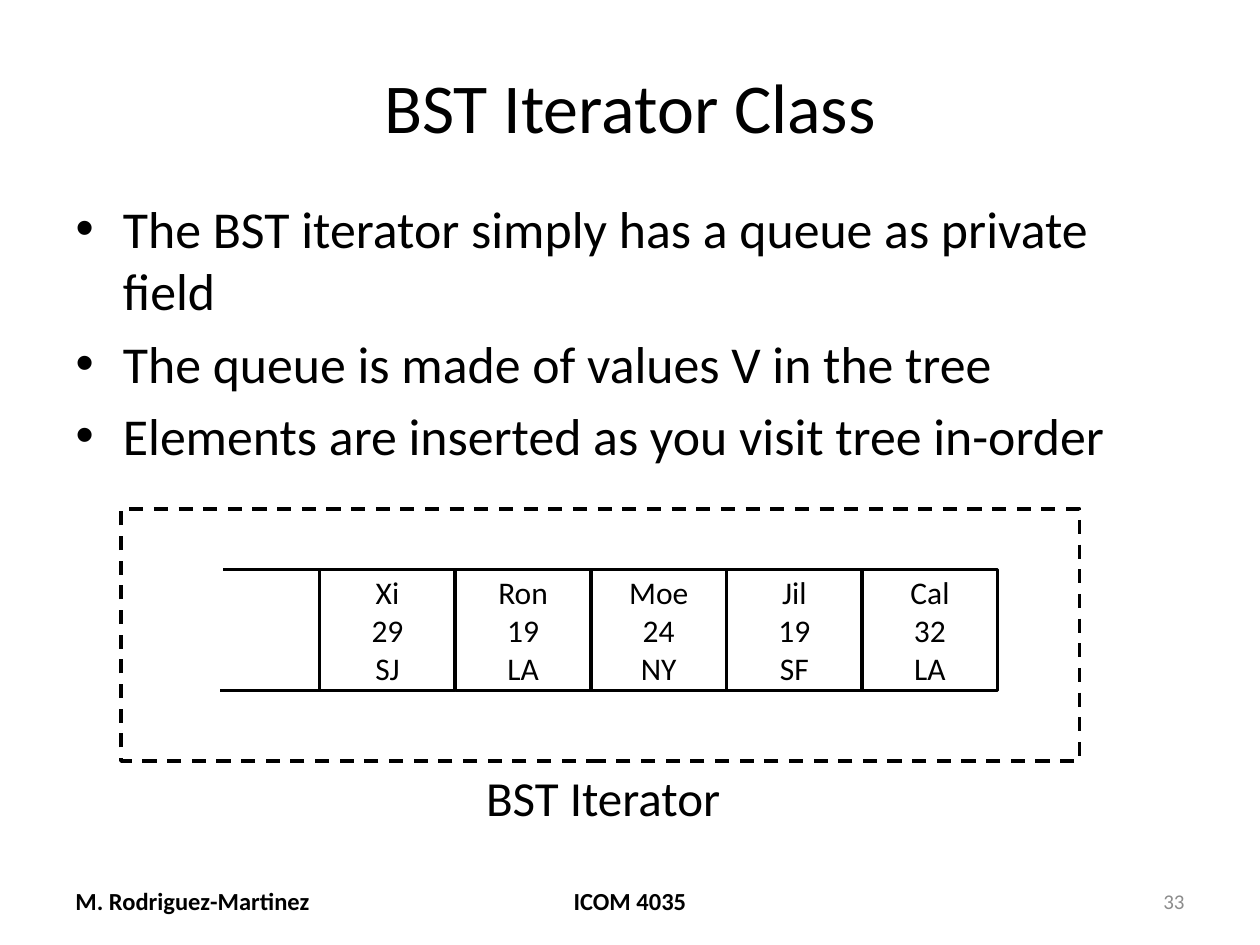
from dataclasses import dataclass

from pptx import Presentation
from pptx.dml.color import RGBColor
from pptx.enum.dml import MSO_LINE_DASH_STYLE as Dash
from pptx.enum.shapes import MSO_CONNECTOR as Connector, MSO_SHAPE as Shape
from pptx.enum.text import MSO_ANCHOR as Anchor, MSO_AUTO_SIZE as AutoSize, PP_ALIGN as Align
from pptx.oxml.xmlchemy import OxmlElement
from pptx.util import Pt

BLACK = RGBColor(0x00, 0x00, 0x00)
WHITE = RGBColor(0xFF, 0xFF, 0xFF)
GRAY = RGBColor(0x8C, 0x8C, 0x8C)
FONT = "Calibri"
LINE_WIDTH = 2
CELL_LEFT, CELL_TOP = 182.7, 325.4
CELL_WIDTH, CELL_HEIGHT = 77.5, 69.1
OPEN_END = 56.9


@dataclass(frozen=True)
class Area:
    left: float
    top: float
    width: float
    height: float

    def lengths(self) -> tuple:
        return Pt(self.left), Pt(self.top), Pt(self.width), Pt(self.height)


@dataclass(frozen=True)
class Style:
    size: float
    align: Align = Align.LEFT
    color: RGBColor = BLACK
    bold: bool = False


@dataclass(frozen=True)
class Label:
    text: str
    area: Area
    style: Style
    wrap: bool = True
    anchor: Anchor = Anchor.MIDDLE


@dataclass(frozen=True)
class Person:
    name: str
    age: str
    city: str


BULLETS = (
    "The BST iterator simply has a queue as private field",
    "The queue is made of values V in the tree",
    "Elements are inserted as you visit tree in-order",
)
QUEUE = (
    Person("Xi", "29", "SJ"),
    Person("Ron", "19", "LA"),
    Person("Moe", "24", "NY"),
    Person("Jil", "19", "SF"),
    Person("Cal", "32", "LA"),
)
LABELS = (
    Label("M. Rodriguez-Martinez", Area(36, 500.5, 168, 28.75), Style(14, bold=True)),
    Label("ICOM 4035", Area(246, 500.5, 228, 28.75), Style(14, Align.CENTER, bold=True)),
    Label("33", Area(516, 500.5, 168, 28.75), Style(12, Align.RIGHT, GRAY)),
    Label("BST Iterator", Area(270.7, 434.9, 151.2, 41), Style(28), False, Anchor.TOP),
)


def write(frame, lines: tuple, style: Style) -> None:
    for index, line in enumerate(lines):
        para = frame.add_paragraph() if index else frame.paragraphs[0]
        para.alignment = style.align
        span = para.add_run()
        span.text = line
        span.font.name = FONT
        span.font.size = Pt(style.size)
        span.font.bold = style.bold
        span.font.color.rgb = style.color


def fill_placeholder(box, area: Area, lines: tuple, style: Style) -> None:
    box.left, box.top, box.width, box.height = area.lengths()
    box.text_frame.auto_size = AutoSize.NONE
    write(box.text_frame, lines, style)


def add_label(page, label: Label) -> None:
    frame = page.shapes.add_textbox(*label.area.lengths()).text_frame
    frame.word_wrap = label.wrap
    frame.vertical_anchor = label.anchor
    write(frame, (label.text,), label.style)


def add_box(page, area: Area):
    box = page.shapes.add_shape(Shape.RECTANGLE, *area.lengths())
    box.shadow.inherit = False
    box.line.color.rgb = BLACK
    box.line.width = Pt(LINE_WIDTH)
    return box


def add_cell(page, index: int, person: Person) -> None:
    left = CELL_LEFT + index * CELL_WIDTH
    box = add_box(page, Area(left, CELL_TOP, CELL_WIDTH, CELL_HEIGHT))
    box.fill.solid()
    box.fill.fore_color.rgb = WHITE
    box.text_frame.vertical_anchor = Anchor.MIDDLE
    write(box.text_frame, (person.name, person.age, person.city), Style(18, Align.CENTER))


def add_open_edge(page, right: float, top: float) -> None:
    edge = page.shapes.add_connector(
        Connector.STRAIGHT, Pt(right), Pt(top), Pt(right - OPEN_END), Pt(top)
    )
    edge.line.color.rgb = BLACK
    edge.line.width = Pt(LINE_WIDTH)
    edge._element.spPr.append(OxmlElement("a:effectLst"))


def main() -> None:
    deck = Presentation()
    deck.slide_width, deck.slide_height = Pt(720), Pt(540)
    page = deck.slides.add_slide(deck.slide_layouts[1])

    title, body = page.placeholders
    fill_placeholder(
        title, Area(36, 21.6, 648, 77), ("BST Iterator Class",), Style(40, Align.CENTER)
    )
    fill_placeholder(body, Area(36, 108.7, 648, 174.2), BULLETS, Style(29.6))
    for label in LABELS:
        add_label(page, label)

    for index, person in reversed(list(enumerate(QUEUE))):
        add_cell(page, index, person)
    add_open_edge(page, CELL_LEFT + 1.6, CELL_TOP)
    add_open_edge(page, CELL_LEFT, CELL_TOP + CELL_HEIGHT)

    border = add_box(page, Area(69.1, 290.9, 547.9, 144))
    border.fill.background()
    border.line.dash_style = Dash.DASH

    deck.save("out.pptx")


if __name__ == "__main__":
    main()
